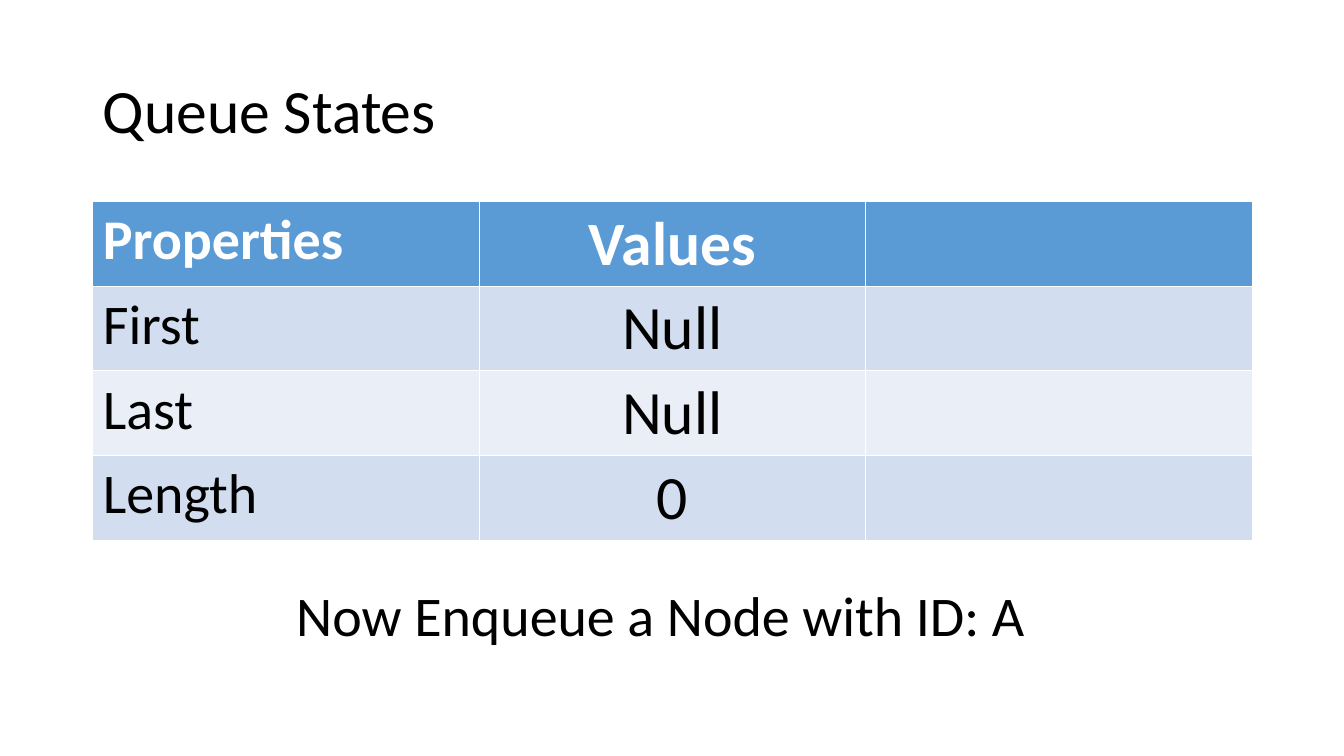
from pptx import Presentation
from pptx.dml.color import RGBColor
from pptx.enum.text import MSO_ANCHOR, PP_ALIGN
from pptx.util import Inches, Pt

TITLE = "Queue States"
STEP = "Now Enqueue a Node with ID: A"
ROWS = [
    ("Properties", "Values", ""),
    ("First", "Null", ""),
    ("Last", "Null", ""),
    ("Length", "0", ""),
]
SIZES = (40, 44, 44)
ALIGNS = (PP_ALIGN.LEFT, PP_ALIGN.CENTER, PP_ALIGN.LEFT)
COLORS = {
    "text": "000000",
    "head": "5B9BD5",
    "head_text": "FFFFFF",
    "odd": "D2DEEF",
    "even": "EAEFF7",
}
LEFT, WIDTH = 0.92, 11.5
TOP, ROW_H = 2, 0.84


def style(para, size, color, bold=False):
    font = para.font
    font.name, font.size, font.bold = "Calibri", Pt(size), bold
    font.color.rgb = RGBColor.from_string(COLORS[color])


def add_text(slide, text, box, size, wrap):
    frame = slide.shapes.add_textbox(*map(Inches, box)).text_frame
    frame.word_wrap = wrap
    para = frame.paragraphs[0]
    para.text = text
    style(para, size, "text")
    return frame


def add_states(slide):
    count = len(ROWS[0])
    box = map(Inches, (LEFT, TOP, WIDTH, ROW_H * len(ROWS)))
    table = slide.shapes.add_table(len(ROWS), count, *box).table
    for col in table.columns:
        col.width = Inches(WIDTH / count)
    for r, row in enumerate(ROWS):
        table.rows[r].height = Inches(ROW_H)
        head = r == 0
        fill = "head" if head else "odd" if r % 2 else "even"
        for c, text in enumerate(row):
            cell = table.cell(r, c)
            cell.fill.solid()
            cell.fill.fore_color.rgb = RGBColor.from_string(COLORS[fill])
            if text:
                cell.text = text
                para = cell.text_frame.paragraphs[0]
                para.alignment = ALIGNS[c]
                style(para, SIZES[c], "head_text" if head else "text", head)


def main():
    deck = Presentation()
    deck.slide_width, deck.slide_height = Inches(13.33), Inches(7.5)
    slide = deck.slides.add_slide(deck.slide_layouts[6])
    title = add_text(slide, TITLE, (LEFT, 0.4, WIDTH, 1.45), 44, True)
    title.vertical_anchor = MSO_ANCHOR.MIDDLE
    title.paragraphs[0].line_spacing = 0.9
    add_states(slide)
    add_text(slide, STEP, (2.84, 5.71, 7.5, 0.77), 40, False)
    deck.save("out.pptx")


if __name__ == "__main__":
    main()
